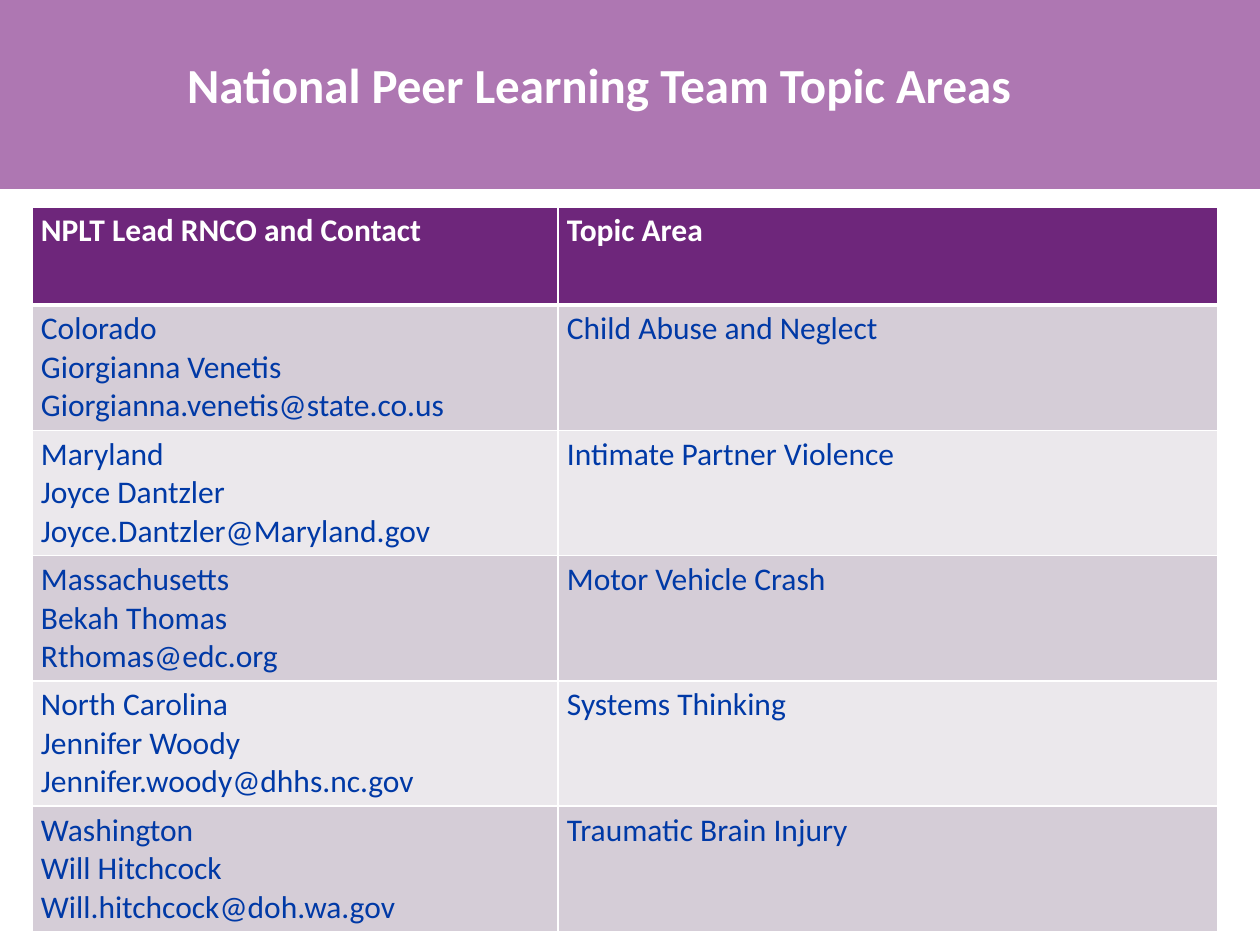
from lxml import etree
from pptx import Presentation
from pptx.dml.color import RGBColor
from pptx.enum.shapes import MSO_SHAPE
from pptx.enum.text import MSO_ANCHOR, PP_ALIGN
from pptx.oxml.ns import qn
from pptx.util import Emu, Pt

RECTANGLE = MSO_SHAPE.RECTANGLE
TOP = MSO_ANCHOR.TOP
CENTER = PP_ALIGN.CENTER
EMU_PER_PX = 914400 / 126

WHITE = RGBColor(0xFF, 0xFF, 0xFF)
ORCHID = RGBColor(0xAE, 0x77, 0xB2)
PURPLE = RGBColor(0x6E, 0x26, 0x7B)
BLUE = RGBColor(0x00, 0x39, 0xA6)
BANDS = (RGBColor(0xD5, 0xCD, 0xD7), RGBColor(0xEB, 0xE8, 0xEC))

TITLE_ONLY_LAYOUT = 5
HEADERS = ("NPLT Lead RNCO and Contact", "Topic Area")
TEAMS = (
    (("Colorado", "Giorgianna Venetis", "Giorgianna.venetis@state.co.us"),
     "Child Abuse and Neglect"),
    (("Maryland", "Joyce Dantzler", "Joyce.Dantzler@Maryland.gov"),
     "Intimate Partner Violence"),
    (("Massachusetts", "Bekah Thomas", "Rthomas@edc.org"),
     "Motor Vehicle Crash"),
    (("North Carolina", "Jennifer Woody", "Jennifer.woody@dhhs.nc.gov"),
     "Systems Thinking"),
    (("Washington", "Will Hitchcock", "Will.hitchcock@doh.wa.gov"),
     "Traumatic Brain Injury"),
)


def px(length):
    return Emu(round(length * EMU_PER_PX))


class SlideBuilder:
    font = "Calibri"
    title_size = 28
    table_size = 18

    def __init__(self, slide):
        self.slide = slide

    def band(self, left, top, width, height, color):
        shape = self.slide.shapes.add_shape(
            RECTANGLE, px(left), px(top), px(width), px(height))
        shape.shadow.inherit = False
        shape.fill.solid()
        shape.fill.fore_color.rgb = color
        shape.line.fill.background()

    def title(self, text, left, top, width, height):
        """Fill the title placeholder and bring it in front of the band."""
        title = self.slide.shapes.title
        title.left, title.top = px(left), px(top)
        title.width, title.height = px(width), px(height)
        title.text_frame.word_wrap = True
        title.text_frame.vertical_anchor = TOP
        paragraph = title.text_frame.paragraphs[0]
        paragraph.alignment = CENTER
        self.run(paragraph, text, self.title_size, WHITE, bold=True)
        title.element.getparent().append(title.element)

    def run(self, paragraph, text, size, color, bold=False):
        run = paragraph.add_run()
        run.text = text
        run.font.name = self.font
        run.font.size = Pt(size)
        run.font.bold = bold
        run.font.color.rgb = color

    def table(self, left, top, column_widths, row_height, headers, rows):
        row_count = len(rows) + 1
        table = self.slide.shapes.add_table(
            row_count, len(headers), px(left), px(top),
            px(sum(column_widths)), px(row_height * row_count)).table
        for column, width in zip(table.columns, column_widths):
            column.width = px(width)
        for cell, header in zip(table.rows[0].cells, headers):
            self.cell(cell, [header], PURPLE, WHITE, bold=True, bottom=3)
        for index, (contact, topic) in enumerate(rows):
            fill = BANDS[index % len(BANDS)]
            top_border = 3 if index == 0 else 1
            for cell, lines in zip(table.rows[index + 1].cells, (contact, [topic])):
                self.cell(cell, lines, fill, BLUE, top=top_border)

    def cell(self, cell, lines, fill, color, bold=False, top=1, bottom=1):
        cell.margin_left = cell.margin_right = px(9)
        cell.margin_top = cell.margin_bottom = px(5)
        for index, line in enumerate(lines):
            frame = cell.text_frame
            paragraph = frame.add_paragraph() if index else frame.paragraphs[0]
            self.run(paragraph, line, self.table_size, color, bold)
        self.borders(cell, {"L": 1, "R": 1, "T": top, "B": bottom})
        cell.fill.solid()
        cell.fill.fore_color.rgb = fill

    def borders(self, cell, widths):
        """Draw white borders; widths maps a side letter to points."""
        properties = cell._tc.get_or_add_tcPr()
        for side, width in widths.items():
            line = etree.SubElement(properties, qn(f"a:ln{side}"), w=str(Pt(width)))
            solid = etree.SubElement(line, qn("a:solidFill"))
            etree.SubElement(solid, qn("a:srgbClr"), val=str(WHITE))


def main():
    presentation = Presentation()
    presentation.slide_width, presentation.slide_height = px(1260), px(945)
    layout = presentation.slide_layouts[TITLE_ONLY_LAYOUT]
    builder = SlideBuilder(presentation.slides.add_slide(layout))
    builder.table(32, 207, (526, 660), 98, HEADERS, TEAMS)
    builder.band(0, 0, 1260, 189, ORCHID)
    builder.title("National Peer Learning Team Topic Areas", 32, 48, 1134, 157)
    presentation.save("out.pptx")


if __name__ == "__main__":
    main()
